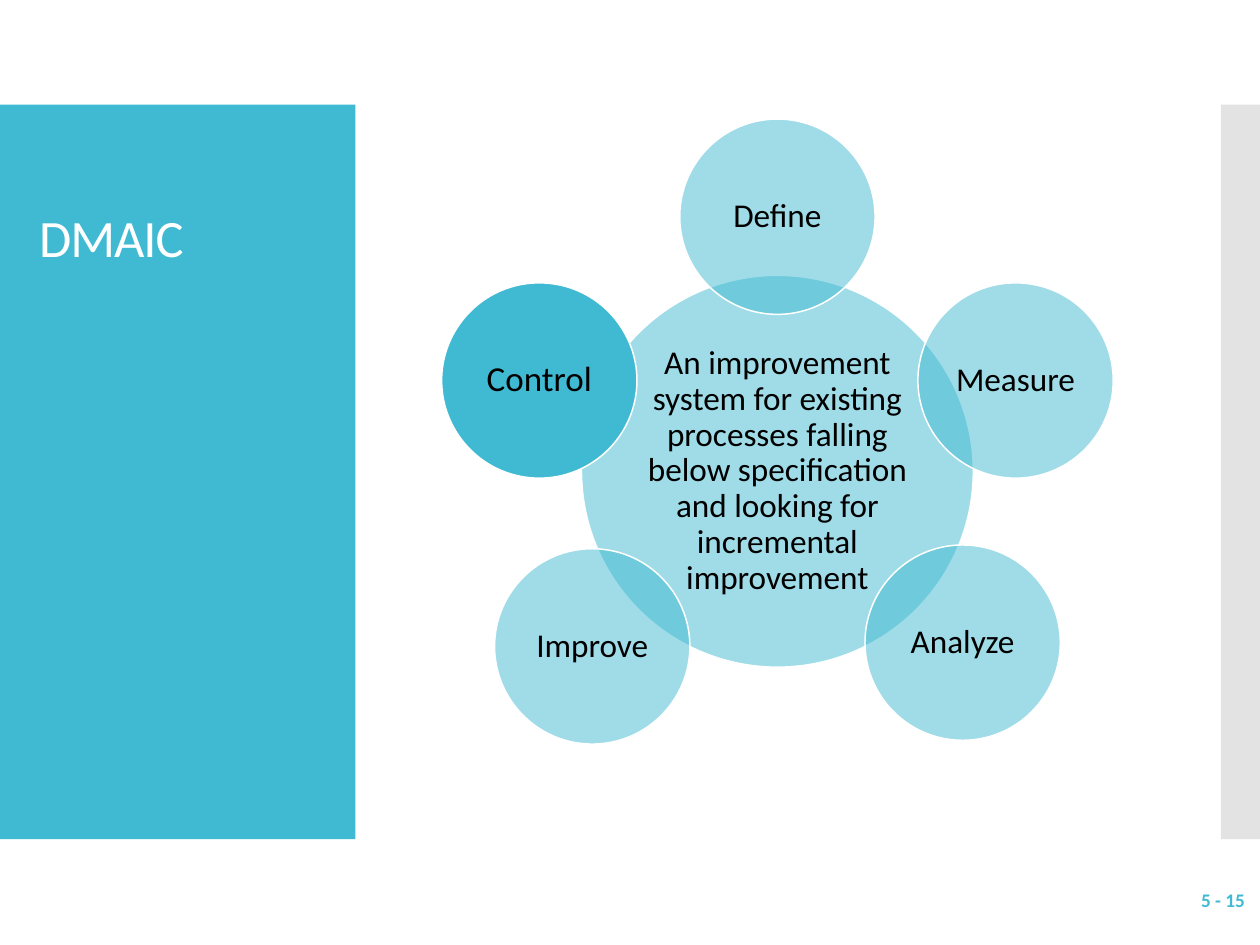
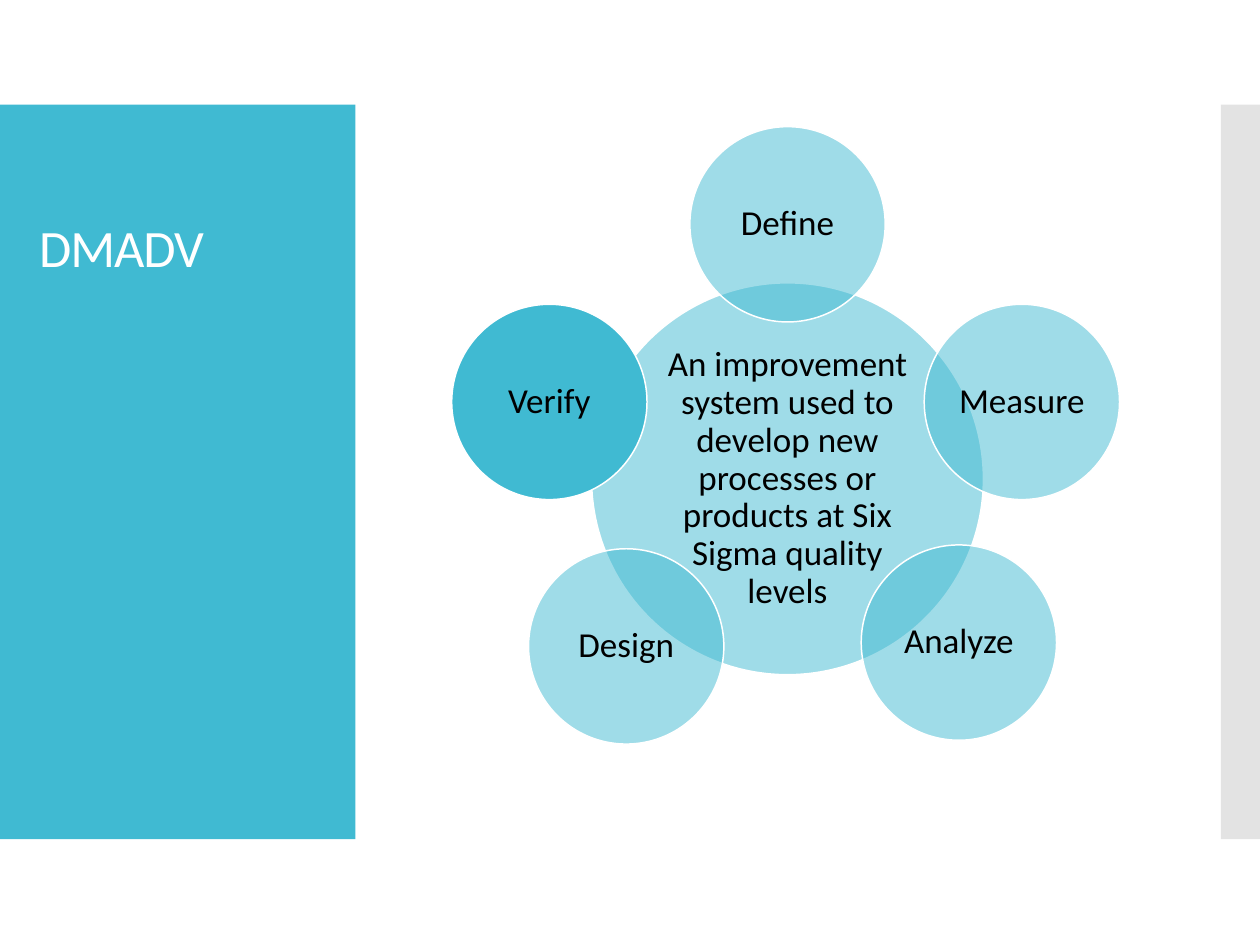
"""Build two slides on the DMAIC and DMADV cycles."""
from dataclasses import dataclass

from lxml.etree import SubElement
from pptx import Presentation
from pptx.dml.color import RGBColor
from pptx.enum.shapes import MSO_SHAPE
from pptx.enum.text import MSO_ANCHOR, PP_ALIGN
from pptx.oxml.ns import qn
from pptx.util import Inches, Pt

RECT, OVAL = MSO_SHAPE.RECTANGLE, MSO_SHAPE.OVAL
MIDDLE = MSO_ANCHOR.MIDDLE
LEFT, CENTER, RIGHT = PP_ALIGN.LEFT, PP_ALIGN.CENTER, PP_ALIGN.RIGHT


@dataclass(frozen=True)
class Theme:
    """Colours, font and type sizes of the deck."""
    teal: RGBColor = RGBColor(0x40, 0xBA, 0xD2)
    gray: RGBColor = RGBColor(0xC8, 0xC8, 0xC8)
    white: RGBColor = RGBColor(0xFF, 0xFF, 0xFF)
    black: RGBColor = RGBColor(0, 0, 0)
    font: str = "Calibri"
    title: int = 30
    large: int = 20
    label: int = 19
    small: int = 11


THEME = Theme()
HUB_SIZE, RING_SIZE = 3.11, 1.55
LINE_GAP = 0.9


def write(frame, text, size, color, align, bold=False):
    """Write one line of styled text, centred in height, and return its run."""
    frame.word_wrap = True
    frame.vertical_anchor = MIDDLE
    para = frame.paragraphs[0]
    para.alignment = align
    para.line_spacing = LINE_GAP
    run = para.add_run()
    run.text = text
    run.font.name = THEME.font
    run.font.size = Pt(size)
    run.font.bold = bold
    run.font.color.rgb = color
    return run


def add_shape(slide, kind, box, color, alpha=100):
    """Add a filled shape without line or shadow."""
    shape = slide.shapes.add_shape(kind, *map(Inches, box))
    shape.shadow.inherit = False
    shape.fill.solid()
    shape.fill.fore_color.rgb = color
    shape.line.fill.background()
    if alpha < 100:
        tint = shape.element.spPr.find(qn("a:solidFill"))[0]
        SubElement(tint, qn("a:alpha")).set("val", str(alpha * 1000))
    return shape


def add_bands(slide):
    """Place the side bands on the layout behind all slides."""
    tree = slide.slide_layout.shapes.element
    left = add_shape(slide, RECT, (0, 0.83, 2.82, 5.83), THEME.teal)
    right = add_shape(slide, RECT, (9.69, 0.83, 0.31, 5.83), THEME.gray, 50)
    for band in (right, left):
        tree.insert(2, band.element)


def add_title(slide, text, top, height):
    """Fill the title placeholder on the left band."""
    title = slide.shapes.title
    title.left, title.top = Inches(0.21), Inches(top)
    title.width, title.height = Inches(2.42), Inches(height)
    run = write(title.text_frame, text, THEME.title, THEME.white, LEFT)
    run.font._element.set("spc", "-60")


def add_circle(slide, center, width, text, size, alpha=50):
    """Add a labelled circle around a centre point."""
    x, y = center
    box = (x - width / 2, y - width / 2, width, width)
    shape = add_shape(slide, OVAL, box, THEME.teal, alpha)
    shape.line.color.rgb = THEME.white
    shape.line.width = Pt(0.85)
    frame = shape.text_frame
    frame.margin_left = frame.margin_right = Inches(0.03)
    frame.margin_top = frame.margin_bottom = Inches(0.03)
    write(frame, text, size, THEME.black, CENTER)


def add_cycle(slide, hub, text, size, steps):
    """Add the hub and its ring of steps, the last one solid and large."""
    add_circle(slide, hub, HUB_SIZE, text, size)
    *first, last = steps
    for name, dx, dy in first:
        add_circle(slide, (hub[0] + dx, hub[1] + dy), RING_SIZE, name, size)
    name, dx, dy = last
    add_circle(slide, (hub[0] + dx, hub[1] + dy), RING_SIZE, name,
               THEME.large, 100)


def add_number(slide, text):
    """Add the page number at the lower right."""
    box = slide.shapes.add_textbox(*map(Inches, (8.72, 6.95, 1.26, 0.4)))
    write(box.text_frame, text, THEME.small, THEME.teal, RIGHT, True)


def main():
    """Build and save the deck."""
    deck = Presentation()
    deck.slide_width, deck.slide_height = Inches(10), Inches(7.5)
    layout = deck.slide_layouts[5]

    slide = deck.slides.add_slide(layout)
    add_bands(slide)
    add_title(slide, "DMAIC", 1.4, 1.02)
    add_number(slide, "5 - 15")
    add_cycle(
        slide, (6.17, 3.74),
        "An improvement system for existing processes falling below "
        "specification and looking for incremental improvement",
        THEME.label,
        [("Define", 0, -2.02), ("Measure", 1.89, -0.72),
         ("Analyze", 1.47, 1.36), ("Improve", -1.47, 1.39),
         ("Control", -1.89, -0.72)])

    slide = deck.slides.add_slide(layout)
    add_title(slide, "DMADV", 1.23, 1.52)
    add_cycle(
        slide, (6.25, 3.8),
        "An improvement system used to develop new processes or products "
        "at Six Sigma quality levels",
        THEME.large,
        [("Define", 0, -2.02), ("Measure", 1.86, -0.61),
         ("Analyze", 1.36, 1.3), ("Design", -1.28, 1.33),
         ("Verify", -1.89, -0.61)])

    deck.save("out.pptx")


if __name__ == "__main__":
    main()
